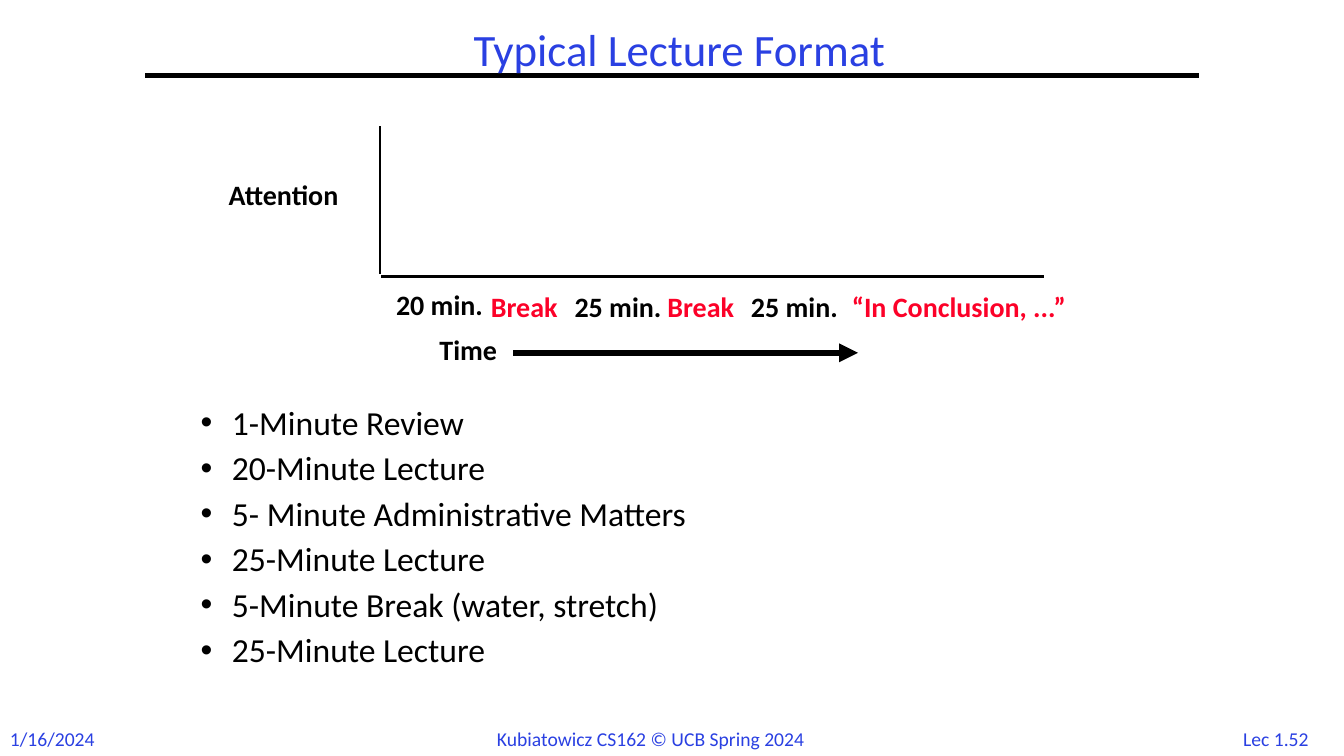
"""Build the Typical Lecture Format slide."""
from lxml import etree
from pptx import Presentation
from pptx import util as u
from pptx.dml.color import RGBColor
from pptx.enum import shapes, text
from pptx.oxml.ns import qn

BLUE, BLACK, RED = "2A40E2", "000000", "FC0128"
LEFT, CENTER = text.PP_ALIGN.LEFT, text.PP_ALIGN.CENTER

presentation = Presentation()
presentation.slide_width = u.Inches(13.33)
presentation.slide_height = u.Inches(7.5)
slide = presentation.slides.add_slide(presentation.slide_layouts[6])


def add_text(lines, left, top, width, height, size=20, color=BLACK, bold=False,
             align=LEFT, inset=(0.1, 0.05), spacing=1.0, gap=0, bullet=False, wrap=False):
    box = slide.shapes.add_textbox(*map(u.Inches, (left, top, width, height)))
    frame = box.text_frame
    frame.word_wrap = wrap
    frame.auto_size = text.MSO_AUTO_SIZE.SHAPE_TO_FIT_TEXT
    frame.margin_left = frame.margin_right = u.Inches(inset[0])
    frame.margin_top = frame.margin_bottom = u.Inches(inset[1])
    frame.text = "\n".join(lines)
    for index, paragraph in enumerate(frame.paragraphs):
        paragraph.alignment = align
        paragraph.line_spacing = spacing
        paragraph.space_before = u.Pt(gap if index else 0)
        if bullet:
            properties = paragraph._p.get_or_add_pPr()
            properties.set("marL", str(u.Inches(0.31)))
            properties.set("indent", str(-u.Inches(0.31)))
            etree.SubElement(properties, qn("a:buFont"), typeface="Arial")
            etree.SubElement(properties, qn("a:buChar"), char="•")
        font = paragraph.runs[0].font
        font.name, font.size, font.bold = "Calibri", u.Pt(size), bold
        font.color.rgb = RGBColor.from_string(color)


def add_line(x1, y1, x2, y2, width, arrow=False):
    connector = slide.shapes.add_connector(
        shapes.MSO_CONNECTOR.STRAIGHT, *map(u.Inches, (x1, y1, x2, y2)))
    connector.line.color.rgb = RGBColor.from_string(BLACK)
    connector.line.width = u.Pt(width)
    if arrow:
        etree.SubElement(connector.line._get_or_add_ln(), qn("a:tailEnd"), type="triangle")
    etree.SubElement(connector._element.spPr, qn("a:effectLst"))


add_text(["Lec 1.52"], 12.17, 7.16, 0.97, 0.34, size=14, color=BLUE, align=CENTER)
add_text(["1/16/2024"], 0, 7.16, 1.07, 0.34, size=14, color=BLUE)
add_line(1.44, 0.75, 11.89, 0.75, 3)
add_text(["Kubiatowicz CS162 © UCB Spring 2024"], 4.83, 7.16, 3.68, 0.34, size=14, color=BLUE)

add_text(["Typical Lecture Format"], 4.38, 0.25, 4.72, 0.54, size=32, color=BLUE,
         align=CENTER, inset=(0.07, 0.03), spacing=0.9)

agenda = [
    "1-Minute Review",
    "20-Minute Lecture",
    "5- Minute Administrative Matters",
    "25-Minute Lecture",
    "5-Minute Break (water, stretch)",
    "25-Minute Lecture",
]
add_text(agenda, 1.92, 4, 8.92, 2.84, size=24, inset=(0.07, 0.03), spacing=0.9,
         gap=6.6, bullet=True, wrap=True)

chart_labels = [
    ("Attention", 2.17, 1.71, 1.43, BLACK),
    ("Time", 4.26, 3.25, 0.85, BLACK),
    ("20 min.", 3.83, 2.8, 1.16, BLACK),
    ("Break", 4.77, 2.82, 0.98, RED),
    ("25 min.", 5.6, 2.82, 1.16, BLACK),
    ("Break", 6.52, 2.82, 0.98, RED),
    ("25 min.", 7.35, 2.82, 1.16, BLACK),
    ("“In Conclusion, ...”", 8.35, 2.82, 2.72, RED),
]
for label, left, top, width, color in chart_labels:
    add_text([label], left, top, width, 0.43, color=color, bold=True)

add_line(3.77, 1.25, 3.77, 2.72, 2)
add_line(3.78, 2.74, 10.35, 2.74, 2)
add_line(5.09, 3.5, 8.51, 3.5, 4.5, arrow=True)

presentation.save("out.pptx")
